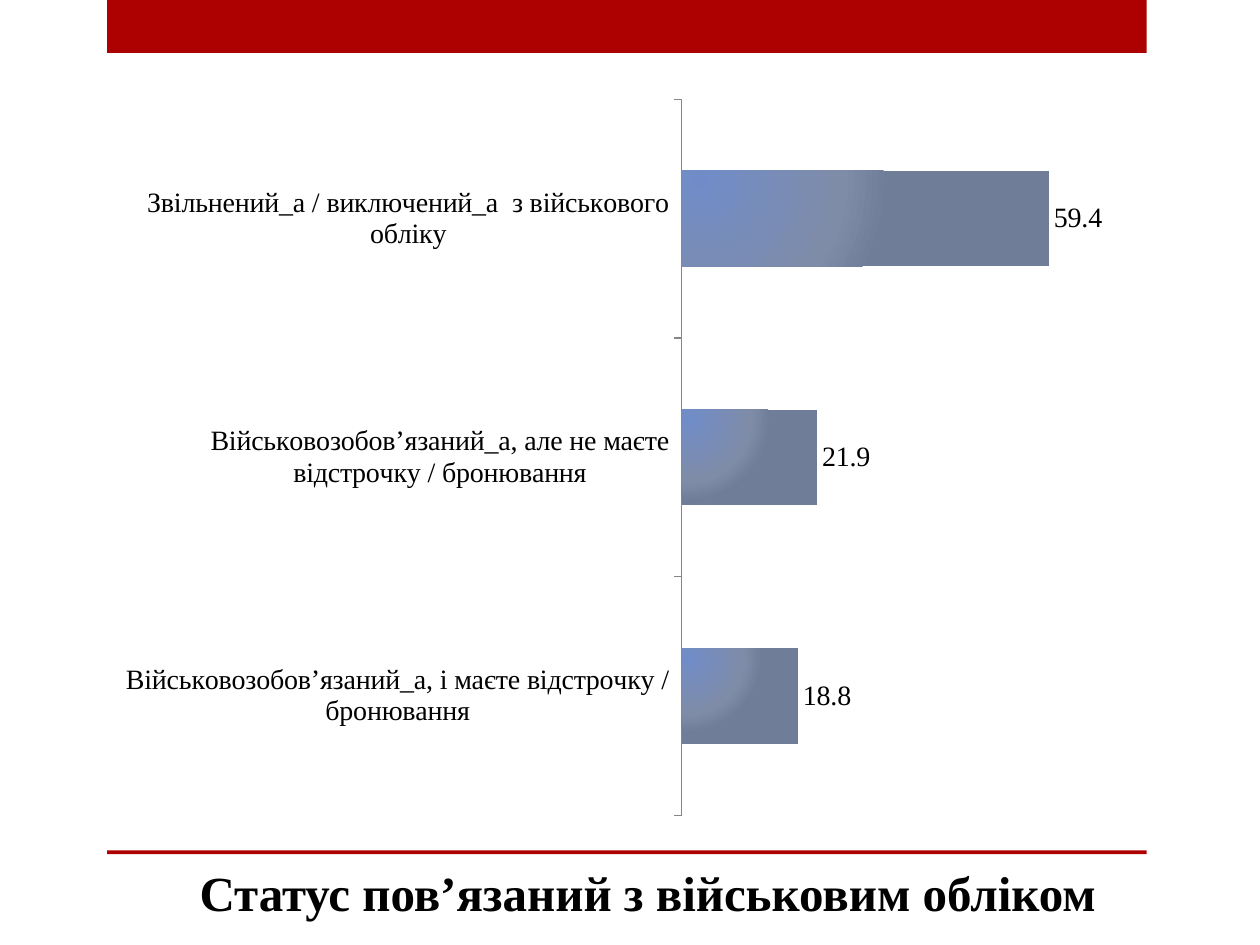
from pptx import Presentation
from pptx.chart.data import CategoryChartData
from pptx.dml.color import RGBColor
from pptx.enum.chart import XL_CHART_TYPE, XL_LABEL_POSITION, XL_TICK_MARK
from pptx.enum.shapes import MSO_SHAPE
from pptx.enum.text import MSO_ANCHOR, PP_ALIGN
from pptx.oxml import parse_xml
from pptx.oxml.ns import nsdecls
from pptx.util import Inches, Pt

RED = RGBColor(0xAD, 0x01, 0x01)
BLACK = RGBColor(0, 0, 0)
AXIS_GRAY = RGBColor(0x86, 0x86, 0x86)
BAR_STOPS = [
    (0, RGBColor(0x70, 0x8C, 0xC8)),
    (75, RGBColor(0x7F, 0x8C, 0xA8)),
    (100, RGBColor(0x70, 0x7D, 0x99)),
]
FONT = "Times New Roman"


def write(frame, text, size, bold=False, color=BLACK, align=PP_ALIGN.CENTER):
    para = frame.paragraphs[0]
    para.alignment = align
    span = para.add_run()
    span.text = text
    span.font.name = FONT
    span.font.size = Pt(size)
    span.font.bold = bold
    span.font.color.rgb = color


deck = Presentation()
deck.slide_width, deck.slide_height = Inches(10), Inches(7.5)
page = deck.slides.add_slide(deck.slide_layouts[5])

# Red band at the top and thin rule above the title
for top, height in [(0, 0.42), (6.75, 0.03)]:
    band = page.shapes.add_shape(
        MSO_SHAPE.RECTANGLE, Inches(0.85), Inches(top), Inches(8.25), Inches(height))
    band.shadow.inherit = False
    band.fill.solid()
    band.fill.fore_color.rgb = RED
    band.line.fill.background()

# Title at the bottom
title = page.shapes.title
title.left, title.top = Inches(0.28), Inches(6.66)
title.width, title.height = Inches(9.72), Inches(0.7)
title.text_frame.word_wrap = True
title.text_frame.vertical_anchor = MSO_ANCHOR.BOTTOM
write(title.text_frame, "Статус пов’язаний з військовим обліком", 28, bold=True)

# Bar chart
data = CategoryChartData(number_format="###0.0")
data.categories = [
    "Військовозобов’язаний_а, і маєте відстрочку / бронювання",
    "Військовозобов’язаний_а, але не маєте відстрочку / бронювання",
    "Звільнений_а / виключений_а  з військового обліку",
]
data.add_series("Series 1", [18.8, 21.9, 59.4])
chart = page.shapes.add_chart(
    XL_CHART_TYPE.BAR_CLUSTERED,
    Inches(0.83), Inches(0.67), Inches(8.18), Inches(5.92), data).chart
chart.has_legend = False
chart.has_title = False
chart.font.name = FONT
chart.font.size = Pt(16)
chart.font.color.rgb = BLACK

# Axes
chart.category_axis.major_tick_mark = XL_TICK_MARK.OUTSIDE
chart.category_axis.format.line.color.rgb = AXIS_GRAY
chart.value_axis.visible = False
chart.value_axis.has_major_gridlines = False
chart.value_axis.minimum_scale = 0
chart.value_axis.maximum_scale = 70

# Bars and value labels
plot = chart.plots[0]
plot.gap_width = 150
plot.vary_by_categories = False
plot.has_data_labels = True
labels = plot.data_labels
labels.show_value = True
labels.number_format = "###0.0"
labels.number_format_is_linked = False
labels.position = XL_LABEL_POSITION.OUTSIDE_END

# Radial gradient from the upper left corner of each bar
stops = "".join(
    f'<a:gs pos="{share * 1000}"><a:srgbClr val="{color}"/></a:gs>'
    for share, color in BAR_STOPS)
bar_format = plot.series[0].format
bar_format.line.fill.background()
bar_format.line._get_or_add_ln().addprevious(parse_xml(
    f'<a:gradFill {nsdecls("a")} rotWithShape="1"><a:gsLst>{stops}</a:gsLst>'
    '<a:path path="circle"><a:fillToRect l="5000" t="10000" r="95000" b="90000"/>'
    '</a:path></a:gradFill>'))

# Fixed plot area leaves room for the long category names
layout = "".join(
    f'<c:{name} val="{value}"/>' for name, value in [
        ("layoutTarget", "inner"), ("xMode", "edge"), ("yMode", "edge"),
        ("x", 0.56), ("y", 0.02), ("w", 0.42), ("h", 0.96)])
plot_area = chart._chartSpace.chart.plotArea
for old_layout in plot_area.findall("{*}layout"):
    plot_area.remove(old_layout)
plot_area.insert(0, parse_xml(
    f'<c:layout {nsdecls("c")}><c:manualLayout>{layout}</c:manualLayout></c:layout>'))

deck.save("out.pptx")
